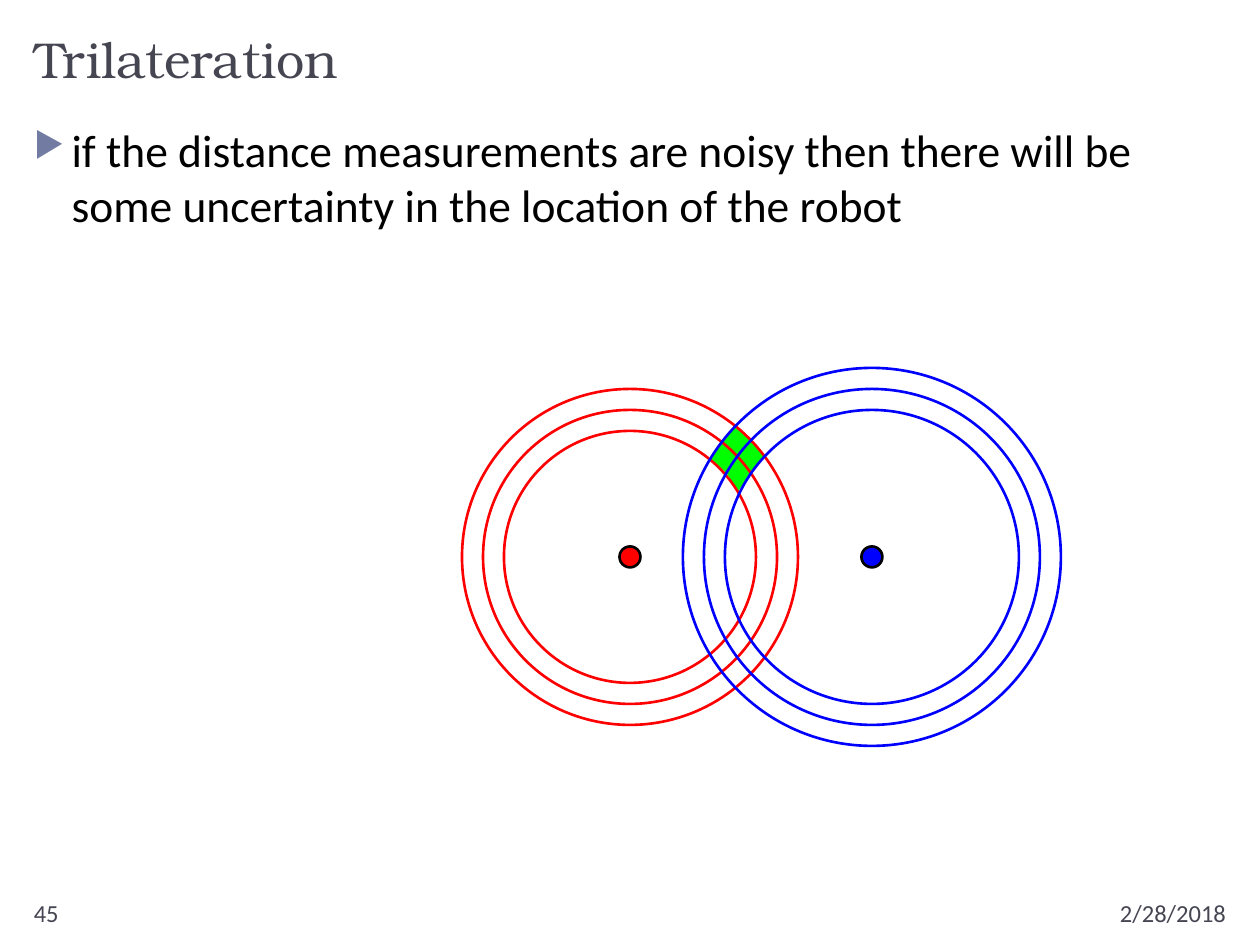
"""Builds a slide on trilateration with noisy distance measurements."""
from typing import NamedTuple

from lxml import etree
from pptx import Presentation
from pptx.dml.color import RGBColor
from pptx.enum.shapes import MSO_SHAPE
from pptx.enum.text import MSO_ANCHOR, MSO_AUTO_SIZE, PP_ALIGN
from pptx.oxml.ns import qn
from pptx.util import Inches, Pt

OVAL = MSO_SHAPE.OVAL
LEFT, RIGHT = PP_ALIGN.LEFT, PP_ALIGN.RIGHT
TOP, BOTTOM = MSO_ANCHOR.TOP, MSO_ANCHOR.BOTTOM
NO_AUTOFIT = MSO_AUTO_SIZE.NONE
TITLE_ONLY = 5
HEADING = "464653"
CENTER_Y = 4.42
RING_GAP = 1 / 6
DOT_RADIUS = 1 / 12
REGION = [(5.64, 3.64), (5.73, 3.51), (5.84, 3.39), (5.95, 3.49),
          (6.07, 3.62), (5.96, 3.74), (5.86, 3.9), (5.77, 3.76)]


class Beacon(NamedTuple):
    x: float
    distance: float
    color: str


BEACONS = [Beacon(5, 7 / 6, "FF0000"), Beacon(6.92, 8 / 6, "0000FF")]


def rgb(color: str) -> RGBColor:
    return RGBColor.from_string(color)


def write(sp, text: str, *, size: float, color: str = HEADING,
          font: str = "Calibri", align=LEFT, anchor=TOP):
    tf = sp.text_frame
    tf.word_wrap = True
    tf.auto_size = NO_AUTOFIT
    tf.vertical_anchor = anchor
    p = tf.paragraphs[0]
    p.alignment = align
    r = p.add_run()
    r.text = text
    r.font.size = Pt(size)
    r.font.name = font
    r.font.color.rgb = rgb(color)
    return p


def add_text(slide, x: float, y: float, w: float, h: float, text: str, **fmt):
    sp = slide.shapes.add_textbox(Inches(x), Inches(y), Inches(w), Inches(h))
    return write(sp, text, **fmt)


def add_bullet(p, char: str, color: str, percent: int, indent: float) -> None:
    pPr = p._p.get_or_add_pPr()
    pPr.set("marL", str(Inches(indent)))
    pPr.set("indent", str(-Inches(indent)))
    buClr = etree.SubElement(pPr, qn("a:buClr"))
    etree.SubElement(buClr, qn("a:srgbClr"), val=color)
    etree.SubElement(pPr, qn("a:buSzPct"), val=str(percent * 1000))
    etree.SubElement(pPr, qn("a:buChar"), char=char)


def add_circle(slide, x: float, radius: float, line: str,
               fill: str | None = None) -> None:
    sp = slide.shapes.add_shape(OVAL, Inches(x - radius), Inches(CENTER_Y - radius),
                                Inches(2 * radius), Inches(2 * radius))
    sp.shadow.inherit = False
    if fill:
        sp.fill.solid()
        sp.fill.fore_color.rgb = rgb(fill)
    else:
        sp.fill.background()
    sp.line.color.rgb = rgb(line)
    sp.line.width = Pt(1.5)


def add_region(slide, points: list[tuple[float, float]], color: str) -> None:
    start, *rest = [(Inches(x), Inches(y)) for x, y in points]
    builder = slide.shapes.build_freeform(*start)
    builder.add_line_segments(rest, close=True)
    sp = builder.convert_to_shape()
    sp.shadow.inherit = False
    sp.fill.solid()
    sp.fill.fore_color.rgb = rgb(color)
    sp.line.fill.background()


def add_beacon(slide, beacon: Beacon) -> None:
    for step in (-1, 0, 1):
        add_circle(slide, beacon.x, beacon.distance + step * RING_GAP, beacon.color)
    add_circle(slide, beacon.x, DOT_RADIUS, "000000", beacon.color)


def main() -> None:
    prs = Presentation()
    prs.slide_width, prs.slide_height = Inches(10), Inches(7.5)
    slide = prs.slides.add_slide(prs.slide_layouts[TITLE_ONLY])

    title = slide.shapes.title
    title.left, title.top = Inches(0.17), Inches(0.17)
    title.width, title.height = Inches(9.67), Inches(0.58)
    write(title, "Trilateration", size=28.8, font="TeX Gyre Bonum", anchor=BOTTOM)

    add_region(slide, REGION, "00FF00")
    p = add_text(slide, 0.17, 0.92, 9.67, 6,
                 "if the distance measurements are noisy then there will be "
                 "some uncertainty in the location of the robot",
                 size=26, color="000000")
    p.space_before = Pt(6)
    add_bullet(p, "▶", "727CA3", 76, 0.3)
    add_text(slide, 0.17, 7.08, 2.17, 0.27, "45", size=14)
    add_text(slide, 8, 7.08, 1.83, 0.27, "2/28/2018", size=14, align=RIGHT)
    for beacon in BEACONS:
        add_beacon(slide, beacon)
    prs.save("out.pptx")


if __name__ == "__main__":
    main()
